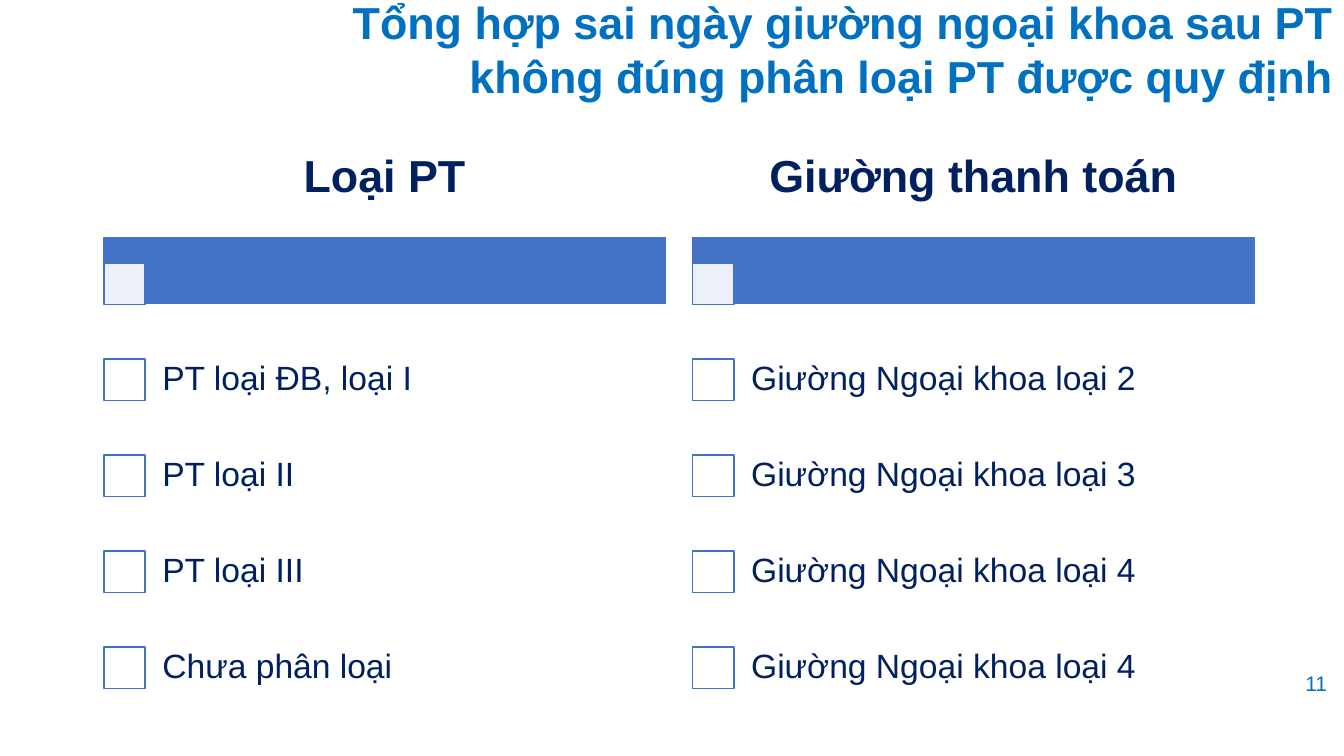
import pptx
import pptx.dml.color
import pptx.enum.shapes
import pptx.enum.text
import pptx.oxml.ns
import pptx.util
from lxml import etree

Inches = pptx.util.Inches
RGBColor = pptx.dml.color.RGBColor
Align = pptx.enum.text.PP_ALIGN
Anchor = pptx.enum.text.MSO_ANCHOR

TITLE = "Tổng hợp sai ngày giường ngoại khoa sau PT không đúng phân loại PT được quy định"
PAGE_NUMBER = "11"
COLUMNS = [
    ("Loại PT", ["PT loại ĐB, loại I", "PT loại II", "PT loại III", "Chưa phân loại"]),
    ("Giường thanh toán", ["Giường Ngoại khoa loại 2", "Giường Ngoại khoa loại 3",
                           "Giường Ngoại khoa loại 4", "Giường Ngoại khoa loại 4"]),
]

BLUE = RGBColor(0x00, 0x70, 0xC0)
NAVY = RGBColor(0x00, 0x20, 0x60)
BAR_BLUE = RGBColor(0x44, 0x72, 0xC4)
WHITE = RGBColor(0xFF, 0xFF, 0xFF)

COLUMN_LEFT, COLUMN_STEP, COLUMN_WIDTH = 1.03, 5.84, 5.57
HEADING_TOP, HEADING_HEIGHT = 1.18, 1.18
BAR_TOP, BAR_HEIGHT = 2.36, 0.65
BOX_SIZE, BAR_BOX_TOP = 0.41, 2.61
ROW_TOP, ROW_HEIGHT, ROW_INDENT = 3.29, 0.953, 0.39

HEADING_FONT = {"name": "Arial", "size": pptx.util.Pt(32), "bold": True}
ITEM_FONT = {"name": "Arial", "size": pptx.util.Pt(24)}
NUMBER_FONT = {"name": "Arial", "size": pptx.util.Pt(15)}


def write_text(shape, text, font, color, alignment, anchor, insets=(0.1, 0.05), spacing=1.0):
    frame = shape.text_frame
    horizontal, vertical = map(Inches, insets)
    frame_format = {
        "word_wrap": True, "auto_size": pptx.enum.text.MSO_AUTO_SIZE.NONE,
        "vertical_anchor": anchor, "margin_left": horizontal, "margin_right": horizontal,
        "margin_top": vertical, "margin_bottom": vertical,
    }
    for name, value in frame_format.items():
        setattr(frame, name, value)
    frame.text = text
    paragraph = frame.paragraphs[0]
    paragraph.alignment = alignment
    paragraph.line_spacing = spacing
    run_font = paragraph.runs[0].font
    for name, value in font.items():
        setattr(run_font, name, value)
    run_font.color.rgb = color


def add_label(slide, place, *text_format):
    write_text(slide.shapes.add_textbox(*map(Inches, place)), *text_format)


def add_rectangle(slide, place, color):
    shape = slide.shapes.add_shape(pptx.enum.shapes.MSO_SHAPE.RECTANGLE, *map(Inches, place))
    shape.shadow.inherit = False
    shape.fill.solid()
    shape.fill.fore_color.rgb = color
    shape.line.color.rgb = BAR_BLUE
    shape.line.width = pptx.util.Pt(1)
    return shape


def set_opacity(shape, percent):
    qn = pptx.oxml.ns.qn
    color = shape.fill._xPr.find(qn("a:solidFill")).find(qn("a:srgbClr"))
    etree.SubElement(color, qn("a:alpha"), val=str(percent * 1000))


def add_column(slide, left, heading, items):
    add_rectangle(slide, (left, BAR_TOP, COLUMN_WIDTH, BAR_HEIGHT), BAR_BLUE)
    bar_box = add_rectangle(slide, (left, BAR_BOX_TOP, BOX_SIZE, BOX_SIZE), WHITE)
    set_opacity(bar_box, 90)
    add_label(slide, (left, HEADING_TOP, COLUMN_WIDTH, HEADING_HEIGHT), heading,
              HEADING_FONT, NAVY, Align.CENTER, Anchor.MIDDLE, (0.07, 0.04), 0.9)
    for row, item in enumerate(items):
        top = ROW_TOP + row * ROW_HEIGHT
        box_top = top + (ROW_HEIGHT - BOX_SIZE) / 2
        add_rectangle(slide, (left, box_top, BOX_SIZE, BOX_SIZE), WHITE)
        add_label(slide, (left + ROW_INDENT, top, COLUMN_WIDTH - ROW_INDENT, ROW_HEIGHT), item,
                  ITEM_FONT, NAVY, Align.LEFT, Anchor.MIDDLE, (0.19, 0.19), 0.9)


def main():
    presentation = pptx.Presentation()
    presentation.slide_width = Inches(13.33)
    presentation.slide_height = Inches(7.5)
    slide = presentation.slides.add_slide(presentation.slide_layouts[5])

    title = slide.shapes.title
    title_place = {"left": 2.66, "top": -0.1, "width": 10.67, "height": 1.41}
    for name, value in title_place.items():
        setattr(title, name, Inches(value))
    write_text(title, TITLE, HEADING_FONT, BLUE, Align.RIGHT, Anchor.TOP)

    add_label(slide, (12.78, 6.58, 0.55, 0.39), PAGE_NUMBER,
              NUMBER_FONT, BLUE, Align.CENTER, Anchor.MIDDLE)
    for index, (heading, items) in enumerate(COLUMNS):
        add_column(slide, COLUMN_LEFT + index * COLUMN_STEP, heading, items)

    presentation.save("out.pptx")


if __name__ == "__main__":
    main()
